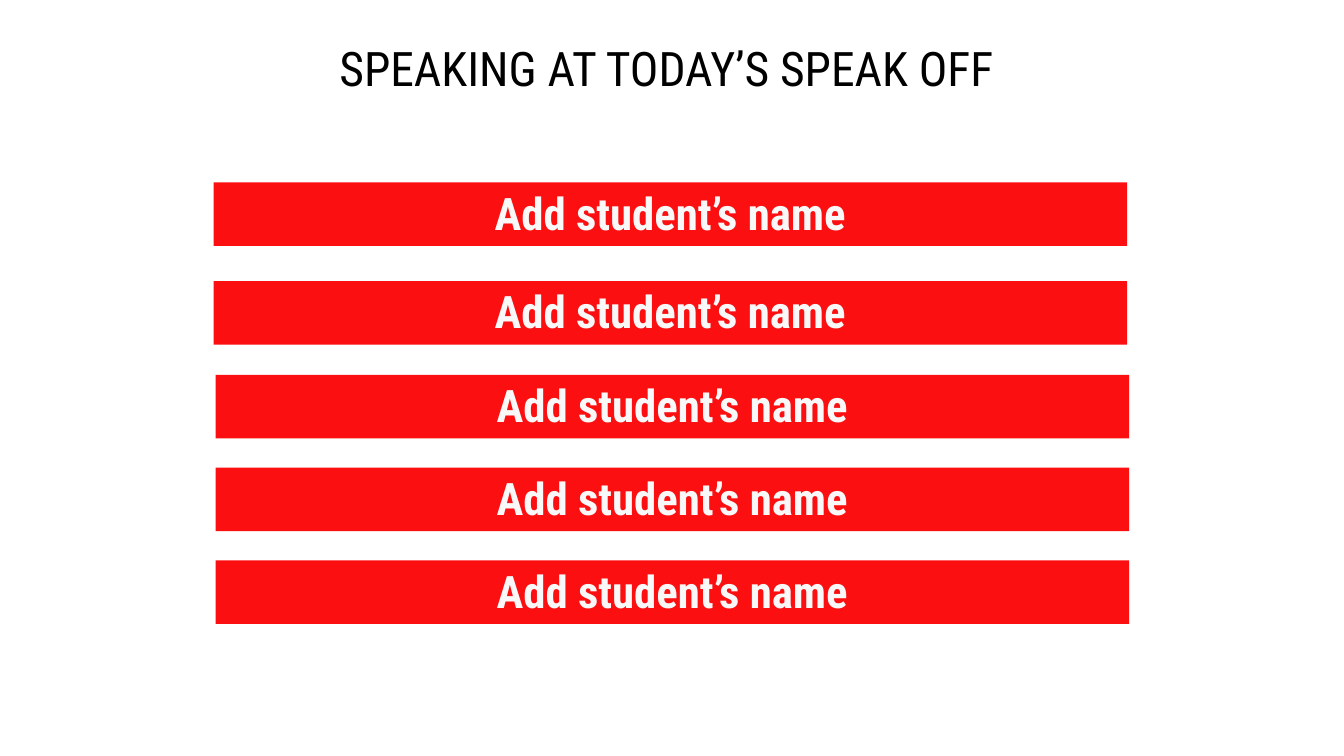
from pptx import Presentation
from pptx.dml.color import RGBColor
from pptx.enum.shapes import MSO_SHAPE
from pptx.enum.text import MSO_ANCHOR, PP_ALIGN
from pptx.util import Inches, Pt

RECTANGLE = MSO_SHAPE.RECTANGLE
MIDDLE = MSO_ANCHOR.MIDDLE
CENTER = PP_ALIGN.CENTER

FONT = "Roboto Condensed"
COLORS = {"page": "FFFFFF", "title": "000000", "bar": "FB0F11", "name": "F8F8F8"}

BAR_WIDTH, BAR_HEIGHT = 9.06, 0.63
# Left and top of each speaker's bar
BAR_PLACES = [(2.12, 1.81), (2.12, 2.79), (2.14, 3.72), (2.14, 4.64), (2.14, 5.56)]


def write_text(shape, text, *, size, color, bold=False, insets=(0, 0, 0, 0), after=0):
    """Write one centred paragraph; insets are left, top, right, bottom."""
    frame = shape.text_frame
    frame.word_wrap = True
    frame.vertical_anchor = MIDDLE
    frame.margin_left, frame.margin_top, frame.margin_right, frame.margin_bottom = map(Inches, insets)
    para = frame.paragraphs[0]
    para.alignment = CENTER
    para.space_after = Pt(after)
    span = para.add_run()
    span.text = text
    span.font.name = FONT
    span.font.size = Pt(size)
    span.font.bold = bold
    span.font.color.rgb = RGBColor.from_string(COLORS[color])


def add_title(page, left, top, width, height):
    box = page.shapes.add_textbox(*map(Inches, (left, top, width, height)))
    write_text(box, "SPEAKING AT TODAY’S SPEAK OFF", size=34, color="title", after=12)


def add_name_bar(page, left, top, width, height):
    bar = page.shapes.add_shape(RECTANGLE, *map(Inches, (left, top, width, height)))
    bar.shadow.inherit = False
    bar.fill.solid()
    bar.fill.fore_color.rgb = RGBColor.from_string(COLORS["bar"])
    bar.line.fill.background()
    write_text(bar, "Add student’s name", size=32, color="name", bold=True,
               insets=(0.1, 0.04, 0.1, 0.08))


def main():
    deck = Presentation()
    deck.slide_width, deck.slide_height = Inches(13.33), Inches(7.5)
    page = deck.slides.add_slide(deck.slide_layouts[6])
    page.background.fill.solid()
    page.background.fill.fore_color.rgb = RGBColor.from_string(COLORS["page"])

    # Heading
    add_title(page, 1.67, -0.12, 9.88, 1.57)

    # Speakers
    for left, top in BAR_PLACES:
        add_name_bar(page, left, top, BAR_WIDTH, BAR_HEIGHT)

    deck.save("out.pptx")


if __name__ == "__main__":
    main()
